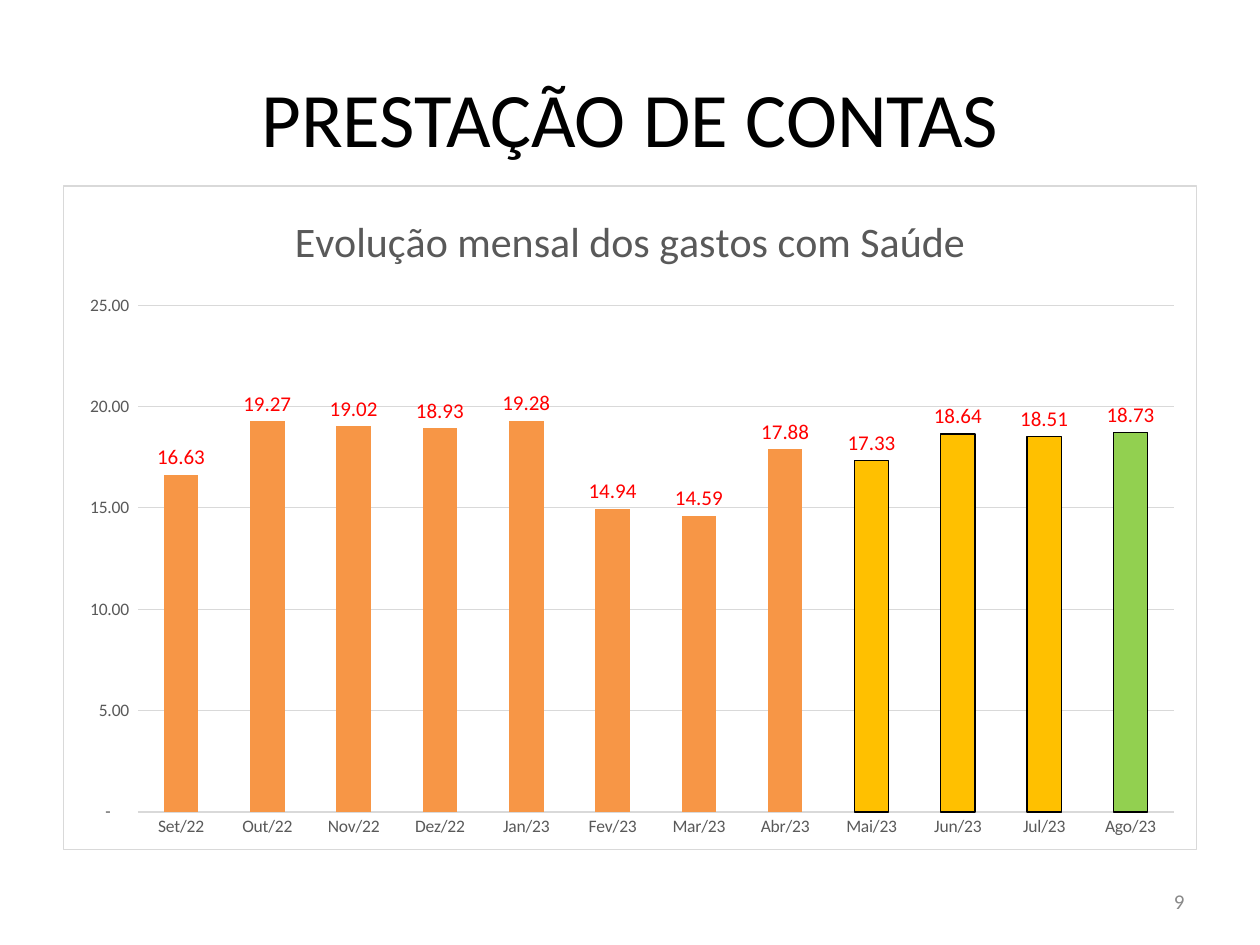
from lxml import etree
from pptx import Presentation
from pptx.chart.data import CategoryChartData
from pptx.dml.color import RGBColor
from pptx.enum.chart import XL_CHART_TYPE, XL_LABEL_POSITION, XL_TICK_MARK
from pptx.enum.text import MSO_ANCHOR, PP_ALIGN
from pptx.util import Inches, Pt

HEADING = "PRESTAÇÃO DE CONTAS"
CHART_TITLE = "Evolução mensal dos gastos com Saúde"
PAGE_NUMBER = "9"
ORANGE, AMBER, GREEN = "F79646", "FFC000", "92D050"
GRAY, LIGHT_GRAY = "595959", "D9D9D9"
SPENDING = [
    ("Set/22", 16.63, ORANGE),
    ("Out/22", 19.27, ORANGE),
    ("Nov/22", 19.02, ORANGE),
    ("Dez/22", 18.93, ORANGE),
    ("Jan/23", 19.28, ORANGE),
    ("Fev/23", 14.94, ORANGE),
    ("Mar/23", 14.59, ORANGE),
    ("Abr/23", 17.88, ORANGE),
    ("Mai/23", 17.33, AMBER),
    ("Jun/23", 18.64, AMBER),
    ("Jul/23", 18.51, AMBER),
    ("Ago/23", 18.73, GREEN),
]
NUMBER_FORMAT = '_(* #,##0.00_);_(* \\(#,##0.00\\);_(* "-"??_);_(@_)'
FRAME = f"""<c:spPr xmlns:c="http://schemas.openxmlformats.org/drawingml/2006/chart"
  xmlns:a="http://schemas.openxmlformats.org/drawingml/2006/main">
  <a:solidFill><a:srgbClr val="FFFFFF"/></a:solidFill>
  <a:ln w="9525"><a:solidFill><a:srgbClr val="{LIGHT_GRAY}"/></a:solidFill></a:ln>
</c:spPr>"""


def style_font(font, size, color):
    font.name = "Calibri"
    font.size = Pt(size)
    font.bold = False
    font.color.rgb = RGBColor.from_string(color)


def style_line(line, color, width=0.75):
    line.color.rgb = RGBColor.from_string(color)
    line.width = Pt(width)


def fill_solid(fill, color):
    fill.solid()
    fill.fore_color.rgb = RGBColor.from_string(color)


def write(frame, text, size, color, align):
    frame.text = text
    frame.word_wrap = True
    frame.vertical_anchor = MSO_ANCHOR.MIDDLE
    frame.paragraphs[0].alignment = align
    style_font(frame.paragraphs[0].font, size, color)


def add_spending_chart(slide):
    data = CategoryChartData(number_format=NUMBER_FORMAT)
    data.categories = [month for month, _, _ in SPENDING]
    data.add_series("Gastos com Saúde", [value for _, value, _ in SPENDING])
    chart = slide.shapes.add_chart(
        XL_CHART_TYPE.COLUMN_CLUSTERED,
        Inches(0.5), Inches(1.47), Inches(9), Inches(5.28), data,
    ).chart
    style_font(chart.font, 10, "000000")
    chart.has_legend = False
    chart.has_title = True
    title = chart.chart_title.text_frame
    title.text = CHART_TITLE
    style_font(title.paragraphs[0].font, 24, GRAY)
    chart.element.chart.addnext(etree.fromstring(FRAME))

    for axis in (chart.category_axis, chart.value_axis):
        axis.major_tick_mark = axis.minor_tick_mark = XL_TICK_MARK.NONE
        style_font(axis.tick_labels.font, 10, GRAY)
    style_line(chart.category_axis.format.line, LIGHT_GRAY)
    values = chart.value_axis
    values.minimum_scale, values.maximum_scale, values.major_unit = 0, 25, 5
    values.format.line.fill.background()
    style_line(values.major_gridlines.format.line, LIGHT_GRAY)
    values.tick_labels.number_format = NUMBER_FORMAT
    values.tick_labels.number_format_is_linked = False

    plot = chart.plots[0]
    plot.gap_width = 150
    plot.vary_by_categories = False
    months = plot.series[0]
    months.invert_if_negative = False
    for index, (_, _, color) in enumerate(SPENDING):
        column = months.points[index].format
        fill_solid(column.fill, color)
        if color != ORANGE:
            style_line(column.line, "000000")

    labels = months.data_labels
    labels.show_value = True
    labels.position = XL_LABEL_POSITION.OUTSIDE_END
    labels.number_format = NUMBER_FORMAT
    labels.number_format_is_linked = False
    style_font(labels.font, 12, "FF0000")


def main():
    deck = Presentation()
    deck.slide_width, deck.slide_height = Inches(10), Inches(7.5)
    slide = deck.slides.add_slide(deck.slide_layouts[5])

    heading = slide.shapes.title
    heading.left, heading.top = Inches(0.5), Inches(0.3)
    heading.width, heading.height = Inches(9), Inches(1.25)
    fill_solid(heading.fill, "FFFFFF")
    write(heading.text_frame, HEADING, 44, "000000", PP_ALIGN.CENTER)

    add_spending_chart(slide)

    page = slide.shapes.add_textbox(Inches(7.17), Inches(6.95), Inches(2.33), Inches(0.4))
    write(page.text_frame, PAGE_NUMBER, 12, "898989", PP_ALIGN.RIGHT)
    deck.save("out.pptx")


if __name__ == "__main__":
    main()
